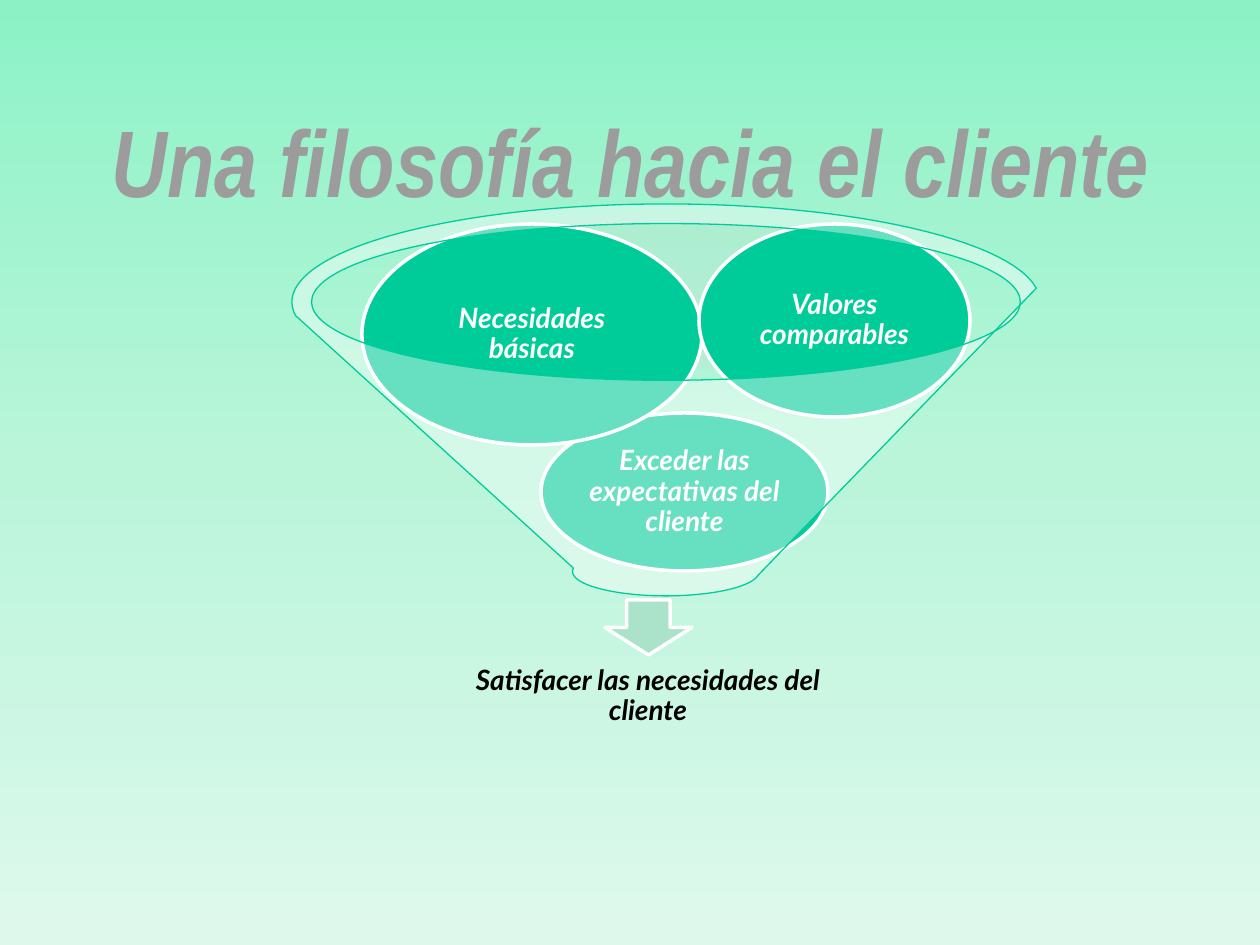
"""Build the slide with the funnel of a customer-centred philosophy."""
from copy import deepcopy

from lxml.etree import SubElement
from pptx import Presentation
from pptx.dml.color import RGBColor
from pptx.enum.shapes import MSO_SHAPE as Shape
from pptx.enum.text import MSO_ANCHOR as Anchor, PP_ALIGN as Align
from pptx.oxml.ns import qn
from pptx.util import Pt

PX = 914400 // 126
GREEN, WHITE = "00CC99", "FFFFFF"


def paint(shape, fill, line=None, width=2, opacity=100):
    shape.shadow.inherit = False
    shape.fill.solid()
    shape.fill.fore_color.rgb = RGBColor.from_string(fill)
    if opacity < 100:
        tint = shape.fill._xPr.find(".//" + qn("a:srgbClr"))
        SubElement(tint, qn("a:alpha"), val=str(opacity * 1000))
    if line:
        shape.line.color.rgb = RGBColor.from_string(line)
        shape.line.width = Pt(width)
    else:
        shape.line.fill.background()


def write(shape, text, color, size=16, font="Lato", inset=2, spacing=0.9, wrap=True):
    frame = shape.text_frame
    frame.word_wrap = wrap
    frame.vertical_anchor = Anchor.MIDDLE
    frame.margin_left = frame.margin_right = inset * PX
    frame.margin_top = frame.margin_bottom = inset * PX
    paragraph = frame.paragraphs[0]
    paragraph.alignment = Align.CENTER
    paragraph.line_spacing = spacing
    run = paragraph.add_run()
    run.text = text
    run.font.name = font
    run.font.size = Pt(size)
    run.font.bold = run.font.italic = True
    run.font.color.rgb = RGBColor.from_string(color)


deck = Presentation()
deck.slide_width, deck.slide_height = 1260 * PX, 945 * PX
slide = deck.slides.add_slide(deck.slide_layouts[5])
shapes = slide.shapes

backdrop = slide.background.fill
backdrop.gradient()
backdrop.gradient_angle = 270
stop_list = slide._element.find(".//" + qn("a:gsLst"))
stop_list.insert(1, deepcopy(stop_list[0]))
backdrop_stops = [(0, "8CF2C6"), (0.5, "BAF5DA"), (1, "DEF9EC")]
for stop, (position, color) in zip(backdrop.gradient_stops, backdrop_stops):
    stop.position = position
    stop.color.rgb = RGBColor.from_string(color)

title = shapes.title
title.left, title.top, title.width, title.height = [n * PX for n in (93, 96, 1075, 127)]
write(title, "Una filosofía hacia el cliente", "9C9C9C", size=54,
      font="Arial Narrow", inset=6, spacing=1.0, wrap=False)

rim = shapes.add_shape(Shape.OVAL, 422 * PX, 215 * PX, 451 * PX, 156 * PX)
paint(rim, "BDE7D4", opacity=40)

outflow = shapes.add_shape(Shape.DOWN_ARROW, 605 * PX, 600 * PX, 87 * PX, 55 * PX)
paint(outflow, "ABE2CA", WHITE)

result = shapes.add_textbox(438 * PX, 644 * PX, 420 * PX, 105 * PX)
write(result, "Satisfacer las necesidades del cliente", "000000", inset=15)

ingredients = [
    ("Exceder las expectativas del cliente", 541, 413, 287, 158),
    ("Necesidades básicas", 362, 224, 340, 221),
    ("Valores comparables", 699, 224, 271, 193),
]
for text, left, top, width, height in ingredients:
    ingredient = shapes.add_shape(Shape.OVAL, left * PX, top * PX, width * PX, height * PX)
    paint(ingredient, GREEN, WHITE)
    write(ingredient, text, WHITE)

funnel = shapes.add_shape(Shape.FUNNEL, 292 * PX, 204 * PX, 748 * PX, 392 * PX)
paint(funnel, WHITE, GREEN, width=0.75, opacity=40)

deck.save("out.pptx")
